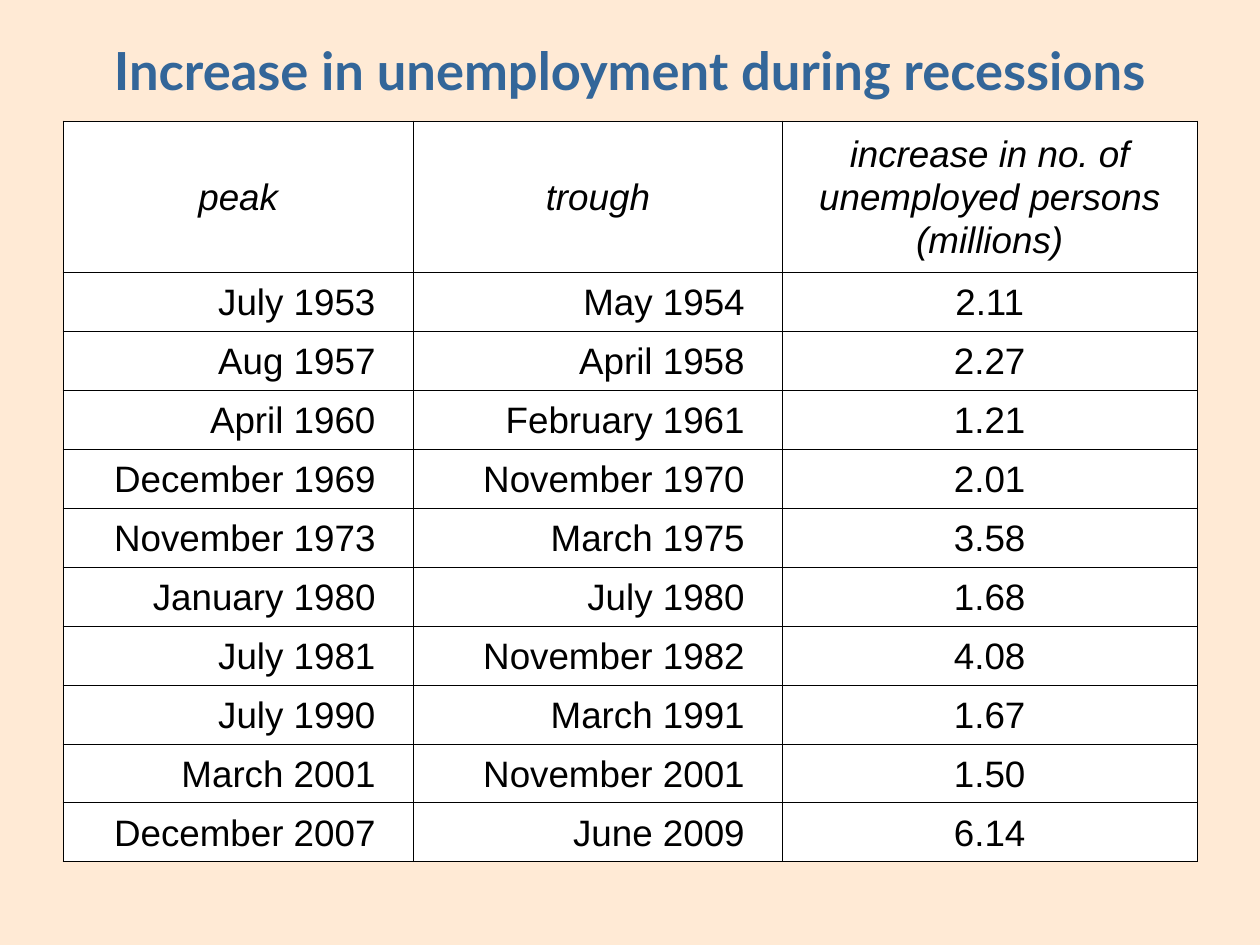
from lxml import etree
from pptx import Presentation
from pptx import util as u
from pptx.dml.color import RGBColor
from pptx.enum import text
from pptx.oxml import ns

COLORS = {"background": "FFEAD5", "title": "336699", "ink": "000000", "cell": "FFFFFF"}
HEADERS = ["peak", "trough", "increase in no. of unemployed persons (millions)"]
RECESSIONS = [
    ("July 1953", "May 1954", "2.11"),
    ("Aug 1957", "April 1958", "2.27"),
    ("April 1960", "February 1961", "1.21"),
    ("December 1969", "November 1970", "2.01"),
    ("November 1973", "March 1975", "3.58"),
    ("January 1980", "July 1980", "1.68"),
    ("July 1981", "November 1982", "4.08"),
    ("July 1990", "March 1991", "1.67"),
    ("March 2001", "November 2001", "1.50"),
    ("December 2007", "June 2009", "6.14"),
]
COLUMN_WIDTHS = [2.78, 2.93, 3.29]
HEADER_HEIGHT = 1.2


def color(name):
    """Return the named colour."""
    return RGBColor.from_string(COLORS[name])


def write_text(frame, content, size=21, font="Arial", ink="ink", bold=False,
               italic=False, align=text.PP_ALIGN.CENTER):
    """Write one formatted paragraph into a text frame."""
    frame.word_wrap = True
    paragraph = frame.paragraphs[0]
    paragraph.alignment = align
    paragraph.line_spacing = 1.05
    run = paragraph.add_run()
    run.text = content
    run.font.size = u.Pt(size)
    run.font.name = font
    run.font.bold = bold
    run.font.italic = italic
    run.font.color.rgb = color(ink)


def set_borders(cell, width=0.5):
    """Draw a thin line on all four sides of a cell."""
    properties = cell._tc.get_or_add_tcPr()
    for index, side in enumerate(("lnL", "lnR", "lnT", "lnB")):
        line = etree.Element(ns.qn(f"a:{side}"), w=str(u.Pt(width)))
        fill = etree.SubElement(line, ns.qn("a:solidFill"))
        etree.SubElement(fill, ns.qn("a:srgbClr"), val=COLORS["ink"])
        properties.insert(index, line)


def add_title(slide, left, top, width, height):
    """Place the slide title in the given box."""
    shape = slide.shapes.add_textbox(*map(u.Inches, (left, top, width, height)))
    frame = shape.text_frame
    frame.margin_left = frame.margin_right = frame.margin_top = frame.margin_bottom = 0
    frame.vertical_anchor = text.MSO_ANCHOR.MIDDLE
    write_text(frame, "Increase in unemployment during recessions",
               size=30, font="Lato", ink="title", bold=True)


def fill_cell(cell, content, is_header, is_date):
    """Format one table cell and write its content."""
    right_aligned = is_date and not is_header
    cell.fill.solid()
    cell.fill.fore_color.rgb = color("cell")
    cell.vertical_anchor = text.MSO_ANCHOR.MIDDLE
    cell.margin_right = u.Inches(0.3 if right_aligned else 0.1)
    write_text(cell.text_frame, content, italic=is_header,
               align=text.PP_ALIGN.RIGHT if right_aligned else text.PP_ALIGN.CENTER)
    set_borders(cell)


def add_recession_table(slide, left, top, width, height):
    """Place the table of recessions in the given box."""
    rows = [HEADERS, *RECESSIONS]
    shape = slide.shapes.add_table(len(rows), len(HEADERS),
                                   *map(u.Inches, (left, top, width, height)))
    table = shape.table
    for column, share in zip(table.columns, COLUMN_WIDTHS):
        column.width = u.Inches(width * share / sum(COLUMN_WIDTHS))
    body_height = (height - HEADER_HEIGHT) / len(RECESSIONS)
    for row_index, row in enumerate(rows):
        is_header = row_index == 0
        table.rows[row_index].height = u.Inches(HEADER_HEIGHT if is_header else body_height)
        for column_index, content in enumerate(row):
            fill_cell(table.cell(row_index, column_index), content,
                      is_header, is_date=column_index < 2)


def main():
    """Build and save the presentation."""
    presentation = Presentation()
    presentation.slide_width = u.Inches(10)
    presentation.slide_height = u.Inches(7.5)
    slide = presentation.slides.add_slide(presentation.slide_layouts[6])
    slide.background.fill.solid()
    slide.background.fill.fore_color.rgb = color("background")
    add_title(slide, 0, 0.16, 10, 0.76)
    add_recession_table(slide, 0.5, 0.96, 9, 5.88)
    presentation.save("out.pptx")


if __name__ == "__main__":
    main()
